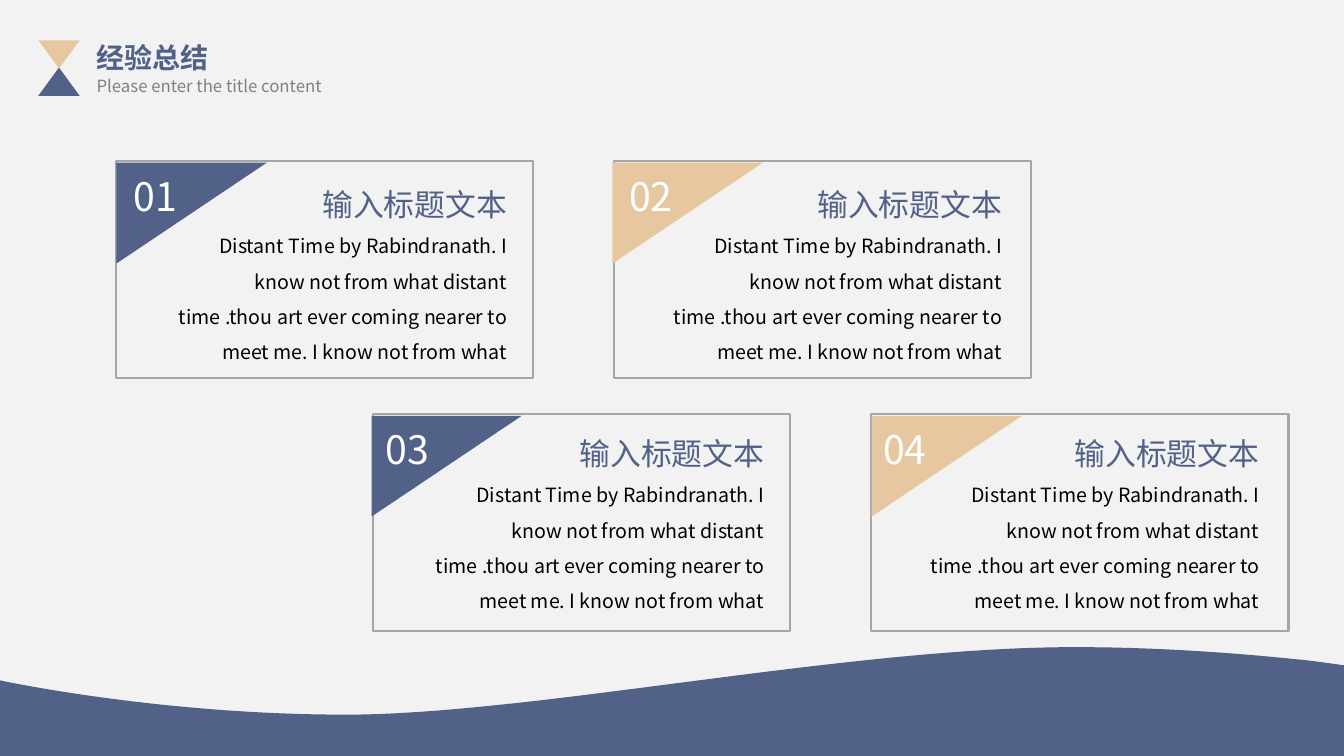
"""Build the experience summary slide with four numbered cards."""
from dataclasses import dataclass
from typing import Any

import lxml.etree
import pptx
import pptx.dml.color
import pptx.enum.shapes
import pptx.enum.text
import pptx.oxml.ns
import pptx.util

Inches = pptx.util.Inches
Align = pptx.enum.text.PP_ALIGN
Shape = pptx.enum.shapes.MSO_SHAPE

BLUE, SAND, GRAY, PALE = "526188", "E7C7A0", "A6A6A6", "F2F2F2"
SC, JP = "Noto Sans CJK SC", "Noto Sans CJK JP"
CARD_TITLE = "输入标题文本"
CARD_BODY = ("Distant Time by Rabindranath. I know not from what distant time "
             ".thou art ever coming nearer to meet me. I know not from what")


@dataclass(frozen=True)
class Card:
    number: str
    color: str
    left: float
    top: float
    corner_left: float
    number_left: float
    title_left: float
    title_top: float


@dataclass(frozen=True)
class Style:
    size: float
    color: str
    font: str = SC
    bold: bool = False
    align: Any = None
    spacing: float | None = None


CARDS = [
    Card("01", BLUE, 1.15, 1.6, 1.4, 1.23, 3.1, 1.79),
    Card("03", BLUE, 3.7, 4.11, 3.93, 3.73, 5.65, 4.26),
    Card("02", SAND, 6.09, 1.6, 6.32, 6.14, 8.01, 1.79),
    Card("04", SAND, 8.64, 4.11, 8.89, 8.66, 10.56, 4.26),
]

NUMBER = Style(28, "FFFFFF", JP)
HEADING = Style(22, BLUE, align=Align.JUSTIFY)
BODY = Style(14, "000000", align=Align.RIGHT, spacing=1.5)

WAVE_START = (10.65, 6.42)
WAVE_LEFT = [
    ((8.4, 6.42), (5.28, 7.09), (3.43, 7.09)),
    ((1.57, 7.09), (0, 6.75), (0, 6.75)),
]
WAVE_EDGES = [(0, 7.53), (13.33, 7.53), (13.33, 6.6), (13.04, 6.56)]
WAVE_CREST = ((12.32, 6.48), (11.49, 6.42), WAVE_START)


def rgb(color: str) -> pptx.dml.color.RGBColor:
    """Convert a hex string to a colour."""
    return pptx.dml.color.RGBColor.from_string(color)


def paint(sp: Any, color: str) -> None:
    """Fill a shape and drop its outline and shadow."""
    sp.shadow.inherit = False
    sp.fill.solid()
    sp.fill.fore_color.rgb = rgb(color)
    sp.line.fill.background()


def add_triangle(shapes: Any, kind: Any, box: tuple, color: str, rotation: float = 0) -> None:
    """Add a filled triangle."""
    sp = shapes.add_shape(kind, *map(Inches, box))
    sp.rotation = rotation
    paint(sp, color)


def add_text(shapes: Any, box: tuple, text: str, style: Style) -> None:
    """Add a one-run text box."""
    tf = shapes.add_textbox(*map(Inches, box)).text_frame
    tf.word_wrap = True
    tf.auto_size = pptx.enum.text.MSO_AUTO_SIZE.SHAPE_TO_FIT_TEXT
    p = tf.paragraphs[0]
    p.alignment = style.align
    p.line_spacing = style.spacing
    r = p.add_run()
    r.text = text
    r.font.size = pptx.util.Pt(style.size)
    r.font.bold = style.bold
    r.font.color.rgb = rgb(style.color)
    r.font.name = style.font
    ea = lxml.etree.SubElement(r.font._element, pptx.oxml.ns.qn("a:ea"))
    ea.set("typeface", style.font)


def bezier(start: tuple, curve: tuple, steps: int = 40) -> list[tuple]:
    """Sample a cubic curve, leaving out its start."""
    points = []
    for t in (i / steps for i in range(1, steps + 1)):
        weights = ((1 - t) ** 3, 3 * t * (1 - t) ** 2, 3 * t * t * (1 - t), t ** 3)
        points.append(tuple(sum(w * pt[axis] for w, pt in zip(weights, (start, *curve)))
                            for axis in (0, 1)))
    return points


def add_wave(shapes: Any) -> None:
    """Draw the wave along the bottom edge."""
    points = [WAVE_START]
    for curve in WAVE_LEFT:
        points += bezier(points[-1], curve)
    points += WAVE_EDGES
    points += bezier(points[-1], WAVE_CREST)
    fb = shapes.build_freeform(*map(Inches, WAVE_START))
    fb.add_line_segments([(Inches(x), Inches(y)) for x, y in points[1:]], close=True)
    paint(fb.convert_to_shape(), BLUE)


def add_header(shapes: Any) -> None:
    """Draw the hourglass mark and the slide title."""
    add_triangle(shapes, Shape.ISOSCELES_TRIANGLE, (0.38, 0.67, 0.41, 0.28), BLUE)
    add_triangle(shapes, Shape.ISOSCELES_TRIANGLE, (0.38, 0.4, 0.41, 0.28), SAND, 180)
    add_text(shapes, (0.86, 0.35, 1.79, 0.43), "经验总结",
             Style(20, BLUE, bold=True, align=Align.JUSTIFY))
    add_text(shapes, (0.86, 0.7, 2.64, 0.3), "Please enter the title content",
             Style(12, "808080", align=Align.JUSTIFY))


def add_card(shapes: Any, card: Card) -> None:
    """Draw one framed card with its corner, number and text."""
    frame = shapes.add_shape(Shape.RECTANGLE, Inches(card.left), Inches(card.top),
                             Inches(4.14), Inches(2.15))
    frame.shadow.inherit = False
    frame.fill.background()
    frame.line.color.rgb = rgb(GRAY)
    frame.line.width = pptx.util.Pt(1.5)
    add_triangle(shapes, Shape.RIGHT_TRIANGLE,
                 (card.corner_left, card.top - 0.23, 1, 1.49), card.color, 90)
    add_text(shapes, (card.number_left, card.top + 0.06, 1.52, 0.57), card.number, NUMBER)
    add_text(shapes, (card.title_left, card.title_top, 2.06, 0.47), CARD_TITLE, HEADING)
    add_text(shapes, (card.title_left - 1.51, card.title_top + 0.37, 3.54, 1.5),
             CARD_BODY, BODY)


def main() -> None:
    """Build and save the slide."""
    prs = pptx.Presentation()
    prs.slide_width, prs.slide_height = Inches(13.33), Inches(7.5)
    s = prs.slides.add_slide(prs.slide_layouts[6])
    s.background.fill.solid()
    s.background.fill.fore_color.rgb = rgb(PALE)
    add_wave(s.shapes)
    add_header(s.shapes.add_group_shape().shapes)
    for card in CARDS:
        add_card(s.shapes.add_group_shape().shapes, card)
    prs.save("out.pptx")


if __name__ == "__main__":
    main()
